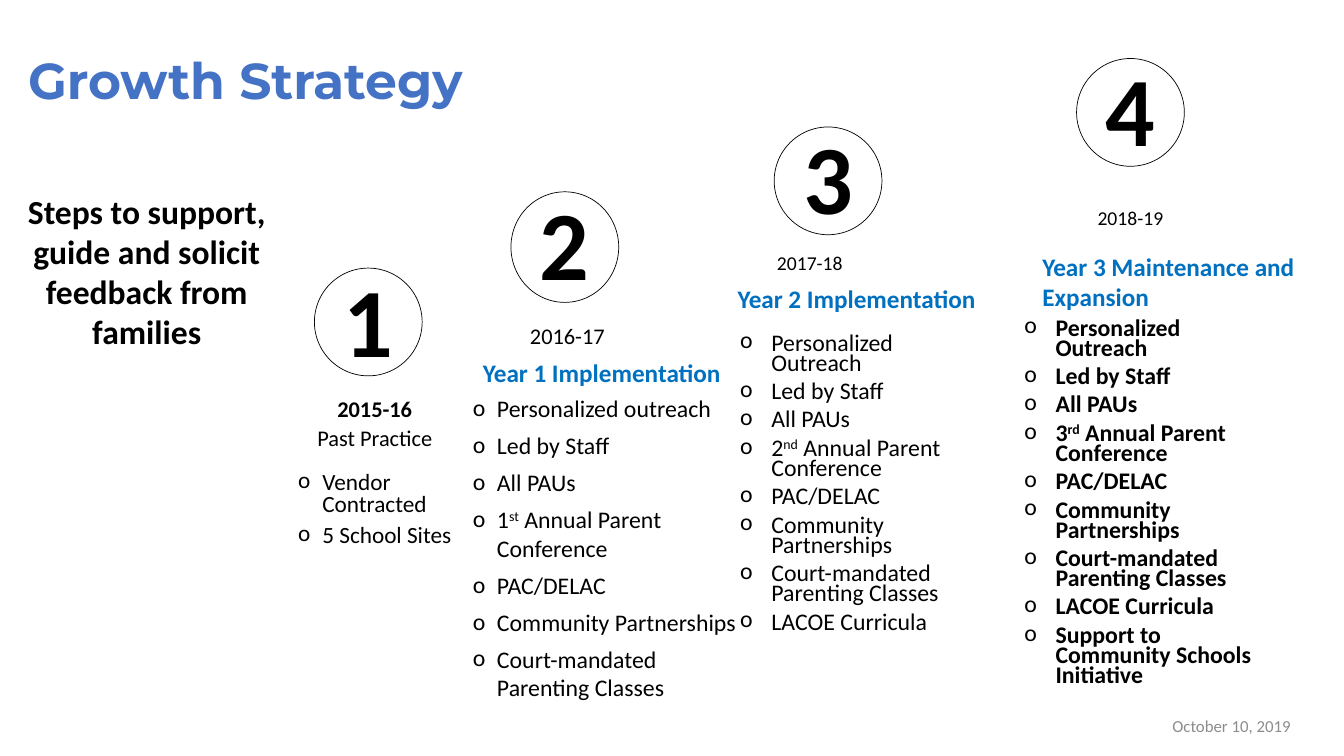
from lxml import etree
from pptx import Presentation
from pptx.dml.color import RGBColor
from pptx.enum import shapes, text
from pptx.oxml import ns
from pptx.util import Pt

COLORS = {"title": "4472C4", "head": "0070C0", "ink": "000000", "date": "8C8C8C"}
LEFT, MID, RIGHT = text.PP_ALIGN.LEFT, text.PP_ALIGN.CENTER, text.PP_ALIGN.RIGHT
TOP, CENTER, BOTTOM = (text.MSO_ANCHOR.TOP, text.MSO_ANCHOR.MIDDLE,
                       text.MSO_ANCHOR.BOTTOM)

# number, circle (left, top, height)
STEPS = [("1", 224.6, 191.5, 77), ("2", 365, 137, 79),
         ("3", 553, 90.7, 77), ("4", 769, 41.8, 77)]

# text, box, size, colour, bold, align, anchor
LABELS = [
    ("Steps to support, guide and solicit feedback from families",
     (9.4, 136, 190.8, 217), 24, "ink", True, MID, TOP),
    ("2015-16", (104.4, 273.6, 190, 28), 16, "ink", True, RIGHT, BOTTOM),
    ("Past Practice", (213.8, 303, 95, 19), 16, "ink", False, RIGHT, BOTTOM),
    ("2016-17", (242, 221, 190, 28), 16, "ink", False, RIGHT, BOTTOM),
    ("2017-18", (555, 179.3, 91, 28), 14, "ink", False, LEFT, TOP),
    ("2018-19", (784, 146.9, 91, 28), 14, "ink", False, LEFT, TOP),
    ("Year 1 Implementation", (344.9, 255, 183, 22), 18, "head", True, LEFT, TOP),
    ("Year 2 Implementation", (527, 202.3, 183, 22), 18, "head", True, LEFT, TOP),
    ("Year 3 Maintenance and Expansion",
     (744.5, 179.3, 183.6, 44), 18, "head", True, LEFT, TOP),
    ("October 10, 2019", (837.4, 506.2, 98, 24), 12, "date", False, LEFT, CENTER),
]


def yearly(num, suffix):
    """Items shared by every year; a tuple holds a raised suffix."""
    return ["Led by Staff", "All PAUs", (num, suffix, " Annual Parent Conference"),
            "PAC/DELAC", "Community Partnerships", "Court-mandated Parenting Classes"]


# items, box, size, bold, line spacing, indent, hang, anchor
LISTS = [
    (["Vendor Contracted", "5 School Sites"],
     (213, 337.7, 122.4, 101), 16.6, False, 0.8, 17.3, 17.3, TOP),
    (["Personalized outreach"] + yearly("1", "st"),
     (337.7, 281.5, 189.6, 241), 17, False, 1.0, 17.3, 17.3, TOP),
    (["Personalized Outreach"] + yearly("2", "nd") + ["LACOE Curricula"],
     (515, 215.3, 170, 237.6), 17, False, 0.7, 36, 22.3, BOTTOM),
    (["Personalized Outreach"] + yearly("3", "rd")
     + ["LACOE Curricula", "Support to Community Schools Initiative"],
     (718, 230.4, 189.4, 260.6), 17, True, 0.7, 36, 22.3, BOTTOM),
]


def place(shape, box):
    shape.left, shape.top, shape.width, shape.height = map(Pt, box)


def setup(shape, anchor, top=0):
    """Return the shape's text frame, wrapped and without side insets."""
    frame = shape.text_frame
    frame.auto_size = text.MSO_AUTO_SIZE.NONE
    frame.word_wrap = True
    frame.vertical_anchor = anchor
    frame.margin_left = frame.margin_right = frame.margin_bottom = 0
    frame.margin_top = Pt(top)
    return frame


def style(para, size, color="ink", bold=False, align=LEFT, face="Calibri"):
    para.alignment = align
    font = para.font
    font.name, font.size, font.bold = face, Pt(size), bold
    font.color.rgb = RGBColor.from_string(COLORS[color])


def bullet(para, indent, hang):
    props = para._p.get_or_add_pPr()
    props.set("marL", str(Pt(indent)))
    props.set("indent", str(-Pt(hang)))
    color = etree.SubElement(props, ns.qn("a:buClr"))
    etree.SubElement(color, ns.qn("a:srgbClr"), val=COLORS["ink"])
    etree.SubElement(props, ns.qn("a:buFont"), typeface="Calibri")
    etree.SubElement(props, ns.qn("a:buChar"), char="o")


def add_title(slide):
    title = slide.shapes.title
    place(title, (20, 18.7, 486.7, 60.5))
    para = setup(title, BOTTOM).paragraphs[0]
    para.text = "Growth Strategy"
    para.line_spacing = 0.9
    style(para, 36, "title", True, face="Montserrat")


def add_step(slide, num, left, top, height):
    oval = slide.shapes.add_shape(shapes.MSO_SHAPE.OVAL, Pt(left), Pt(top),
                                  Pt(77), Pt(height))
    oval.shadow.inherit = False
    oval.fill.background()
    oval.line.color.rgb = RGBColor.from_string(COLORS["ink"])
    oval.line.width = Pt(0.5)
    para = setup(oval, CENTER, 6 if num == "1" else 3).paragraphs[0]
    para.text = num
    para.line_spacing = 0.9
    style(para, 70, bold=True, align=MID)


def add_label(slide, words, box, size, color, bold, align, anchor):
    para = setup(slide.shapes.add_textbox(*map(Pt, box)), anchor).paragraphs[0]
    para.text = words
    style(para, size, color, bold, align)


def fill_list(holder, items, box, size, bold, space, indent, hang, anchor):
    place(holder, box)
    frame = setup(holder, anchor)
    for i, item in enumerate(items):
        para = frame.add_paragraph() if i else frame.paragraphs[0]
        bullet(para, indent, hang)
        para.line_spacing = space
        para.space_before = Pt(6 if i else 0)
        parts = (item,) if isinstance(item, str) else item
        for j, part in enumerate(parts):
            run = para.add_run()
            run.text = part
            if j == 1:
                run._r.get_or_add_rPr().set("baseline", "30000")
        style(para, size, bold=bold)


def main():
    deck = Presentation()
    deck.slide_width, deck.slide_height = Pt(960), Pt(540)
    slide = deck.slides.add_slide(deck.slide_layouts.get_by_name("Comparison"))
    add_title(slide)
    for step in STEPS:
        add_step(slide, *step)
    for label in LABELS:
        add_label(slide, *label)
    for idx, column in enumerate(LISTS, 1):
        fill_list(slide.placeholders[idx], *column)
    deck.save("out.pptx")


if __name__ == "__main__":
    main()
